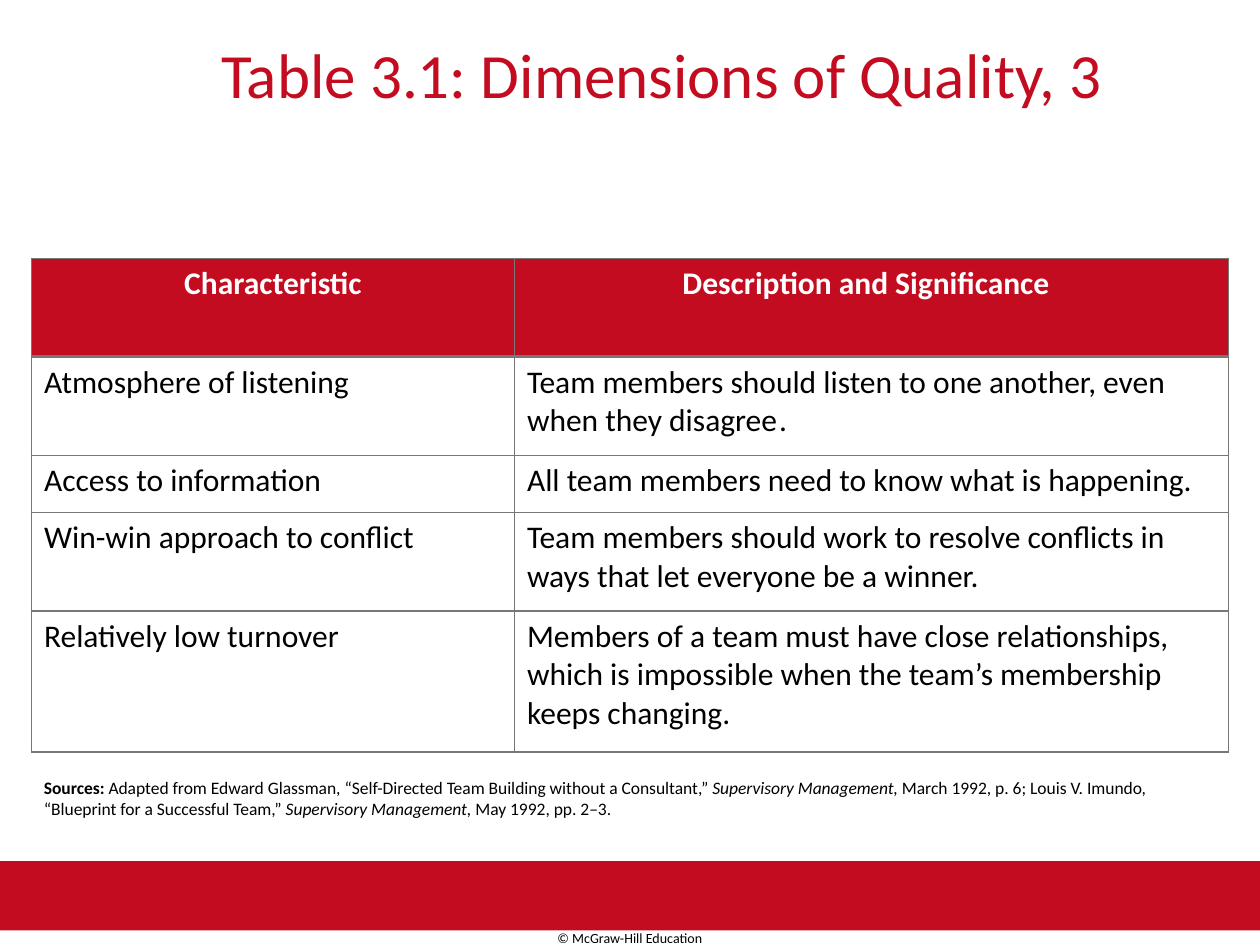
from dataclasses import dataclass

from lxml.etree import SubElement
from pptx import Presentation
from pptx.dml.color import RGBColor
from pptx.enum.shapes import MSO_SHAPE
from pptx.enum.text import MSO_ANCHOR, PP_ALIGN
from pptx.oxml.ns import qn
from pptx.util import Pt

COLORS = {"red": "C30C20", "black": "000000", "white": "FFFFFF", "grey": "777777"}
FONT = "Calibri"


@dataclass
class Run:
    text: str
    bold: bool = False
    italic: bool = False


@dataclass
class TextBox:
    left: float
    top: float
    width: float
    height: float
    size: float
    color: str
    align: PP_ALIGN
    anchor: MSO_ANCHOR
    runs: list[Run]


@dataclass
class Row:
    height: float
    cells: tuple[str, str]


ROWS = [
    Row(56.4, ("Characteristic", "Description and Significance\t")),
    Row(56.4, ("Atmosphere of listening\t",
               "Team members should listen to one another, even when they disagree\t.")),
    Row(32.4, ("Access to information\t",
               "All team members need to know what is happening.")),
    Row(56.4, ("Win-win approach to conflict\t",
               "Team members should work to resolve conflicts in ways "
               "that let everyone be a winner.")),
    Row(80.6, ("Relatively low turnover\t",
               "Members of a team must have close relationships, which is impossible "
               "when the team’s membership keeps changing.")),
]
COLUMNS = (276, 408)

TEXTS = [
    TextBox(180, 527.8, 360, 17, 8, "black", PP_ALIGN.CENTER, MSO_ANCHOR.TOP,
            [Run("© McGraw-Hill Education")]),
    TextBox(0, 18, 720, 48, 36, "red", PP_ALIGN.CENTER, MSO_ANCHOR.MIDDLE,
            [Run("\tTable 3.1: Dimensions of Quality, 3")]),
    TextBox(18, 444, 684, 24, 10, "black", PP_ALIGN.LEFT, MSO_ANCHOR.MIDDLE, [
        Run("Sources: ", bold=True),
        Run("Adapted from Edward Glassman, “Self-Directed Team Building "
            "without a Consultant,” "),
        Run("Supervisory Management, ", italic=True),
        Run("March 1992, p. 6; Louis V. Imundo, “Blueprint for a Successful Team,” "),
        Run("Supervisory Management, ", italic=True),
        Run("May 1992, pp. 2–3."),
    ]),
]


def rgb(name: str) -> RGBColor:
    return RGBColor.from_string(COLORS[name])


def add_runs(p, runs: list[Run], size: float, color: str, align: PP_ALIGN) -> None:
    p.alignment = align
    for run in runs:
        r = p.add_run()
        r.text = run.text
        r.font.name = FONT
        r.font.size = Pt(size)
        r.font.bold = run.bold
        r.font.italic = run.italic
        r.font.color.rgb = rgb(color)


def add_band(s) -> None:
    sp = s.shapes.add_shape(MSO_SHAPE.RECTANGLE, 0, Pt(492), Pt(720), Pt(39.6))
    sp.shadow.inherit = False
    sp.fill.solid()
    sp.fill.fore_color.rgb = rgb("red")
    sp.line.fill.background()


def add_text(s, box: TextBox) -> None:
    sp = s.shapes.add_textbox(Pt(box.left), Pt(box.top), Pt(box.width), Pt(box.height))
    tf = sp.text_frame
    tf.word_wrap = True
    tf.vertical_anchor = box.anchor
    add_runs(tf.paragraphs[0], box.runs, box.size, box.color, box.align)


def set_borders(cell, bottom: float) -> None:
    tcPr = cell._tc.get_or_add_tcPr()
    widths = {"a:lnL": 1, "a:lnR": 1, "a:lnT": 1, "a:lnB": bottom}
    for tag, width in widths.items():
        ln = SubElement(tcPr, qn(tag), w=str(Pt(width)))
        fill = SubElement(ln, qn("a:solidFill"))
        SubElement(fill, qn("a:srgbClr"), val=COLORS["grey"])


def add_quality_table(s) -> None:
    height = sum(row.height for row in ROWS)
    table = s.shapes.add_table(len(ROWS), len(COLUMNS), Pt(18), Pt(147.6),
                               Pt(sum(COLUMNS)), Pt(height)).table
    table.horz_banding = False
    for column, width in zip(table.columns, COLUMNS):
        column.width = Pt(width)
    for i, row in enumerate(ROWS):
        header = i == 0
        table.rows[i].height = Pt(row.height)
        for j, text in enumerate(row.cells):
            cell = table.cell(i, j)
            set_borders(cell, 2 if header else 1)
            cell.fill.solid()
            cell.fill.fore_color.rgb = rgb("red" if header else "white")
            add_runs(cell.text_frame.paragraphs[0], [Run(text, bold=header)], 18,
                     "white" if header else "black",
                     PP_ALIGN.CENTER if header else PP_ALIGN.LEFT)


def main() -> None:
    prs = Presentation()
    prs.slide_width = Pt(720)
    prs.slide_height = Pt(540)
    s = prs.slides.add_slide(prs.slide_layouts[6])
    add_band(s)
    footer, title, sources = TEXTS
    add_text(s, footer)
    add_text(s, title)
    add_quality_table(s)
    add_text(s, sources)
    prs.save("out.pptx")


if __name__ == "__main__":
    main()
